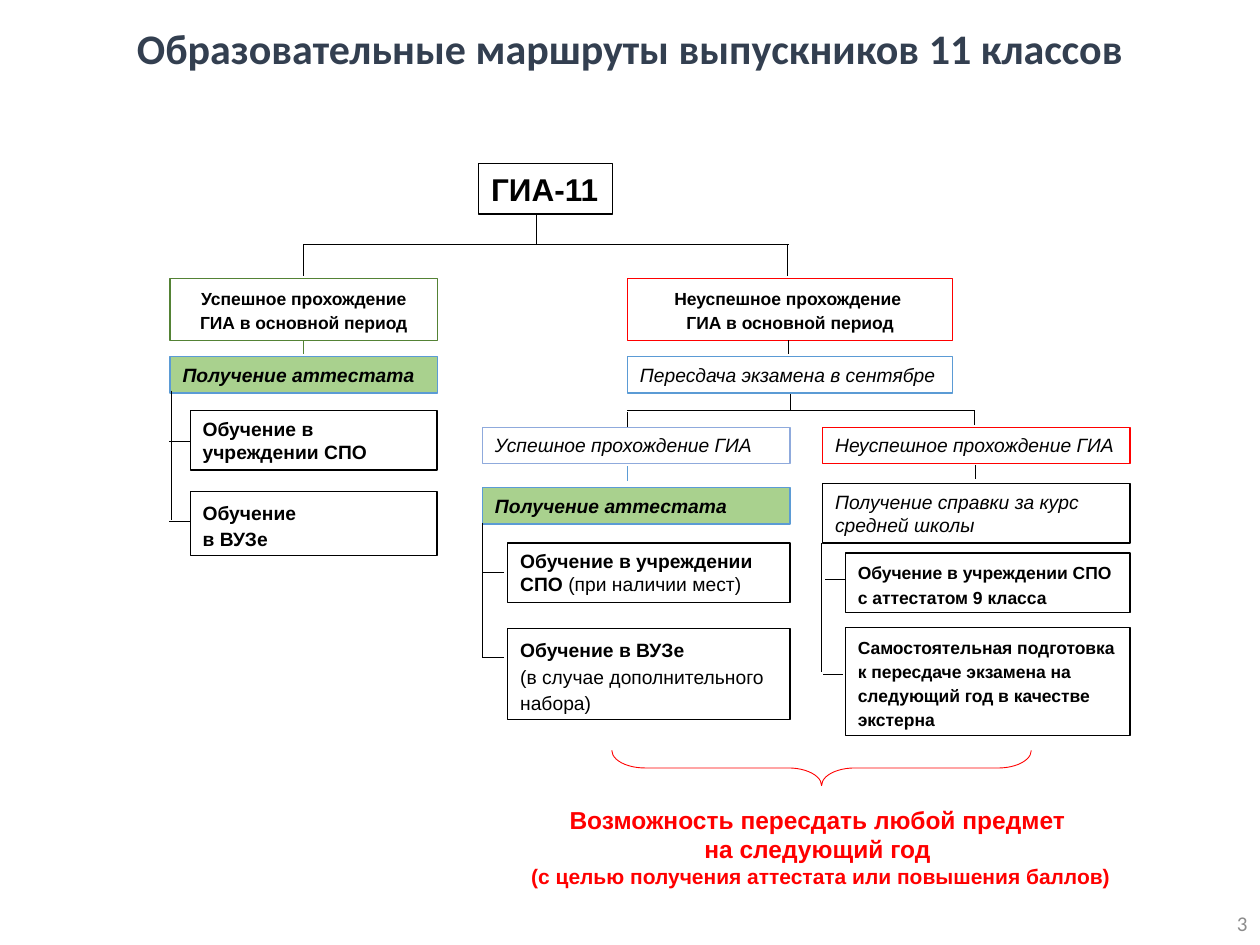
"""Build a slide with the routes open to school leavers after the grade 11 exams."""
from lxml import etree
from pptx import Presentation
from pptx.dml.color import RGBColor
from pptx.enum.shapes import MSO_CONNECTOR, MSO_SHAPE
from pptx.enum.text import MSO_ANCHOR, MSO_AUTO_SIZE, PP_ALIGN
from pptx.oxml.ns import qn
from pptx.util import Inches, Pt

BLACK = RGBColor(0x00, 0x00, 0x00)
RED = RGBColor(0xFF, 0x00, 0x00)
GREEN = RGBColor(0x54, 0x82, 0x35)
LIGHT_GREEN = RGBColor(0xA9, 0xD1, 0x8E)
BLUE = RGBColor(0x5B, 0x9B, 0xD5)
PALE_BLUE = RGBColor(0x8F, 0xAA, 0xDC)
NAVY = RGBColor(0x33, 0x3F, 0x50)
GRAY = RGBColor(0x8C, 0x8C, 0x8C)
LEFT, CENTER, RIGHT = PP_ALIGN.LEFT, PP_ALIGN.CENTER, PP_ALIGN.RIGHT

prs = Presentation()
prs.slide_width, prs.slide_height = Inches(10), Inches(7.5)
slide = prs.slides.add_slide(prs.slide_layouts[5])
shapes = slide.shapes


def write(frame, text, size, color=BLACK, bold=False, italic=False,
          align=LEFT, spacing=1.0, font="Arial", anchor=MSO_ANCHOR.TOP, wrap=True):
    frame.text = text
    frame.word_wrap = wrap
    frame.auto_size = MSO_AUTO_SIZE.NONE
    frame.vertical_anchor = anchor
    for paragraph in frame.paragraphs:
        paragraph.alignment = align
        paragraph.line_spacing = spacing
        paragraph.font.name = font
        paragraph.font.size = Pt(size)
        paragraph.font.bold = bold
        paragraph.font.italic = italic
        paragraph.font.color.rgb = color
    return frame


def box(left, top, width, height, text, size, outline=BLACK, fill=None, **style):
    step = shapes.add_shape(MSO_SHAPE.RECTANGLE, Inches(left), Inches(top),
                            Inches(width), Inches(height))
    step.shadow.inherit = False
    step.line.color.rgb = outline
    step.line.width = Pt(0.75)
    if fill is None:
        step.fill.background()
    else:
        step.fill.solid()
        step.fill.fore_color.rgb = fill
    return write(step.text_frame, text, size, **style)


title = shapes.title
title.left, title.top = Inches(0), Inches(0.1)
title.width, title.height = Inches(10), Inches(0.51)
write(title.text_frame, "Образовательные маршруты выпускников 11 классов", 24, NAVY,
      bold=True, align=CENTER, spacing=1.07, font="Calibri")

page_number = shapes.add_textbox(Inches(7.75), Inches(7.13), Inches(2.25), Inches(0.4))
write(page_number.text_frame, "3", 12, GRAY, align=RIGHT, font="Calibri",
      anchor=MSO_ANCHOR.MIDDLE)

box(3.8, 1.3, 1.06, 0.4, "ГИА-11", 18, bold=True, wrap=False)

outcome = dict(bold=True, align=CENTER, spacing=1.15)
box(1.35, 2.21, 2.12, 0.49, "Успешное прохождение ГИА в основной период", 10, GREEN, **outcome)
box(4.98, 2.21, 2.58, 0.49, "Неуспешное прохождение \vГИА в основной период", 10, RED, **outcome)

for left, top, width in [(1.35, 2.83, 2.12), (3.83, 3.87, 2.44)]:
    box(left, top, width, 0.29, "Получение аттестата", 11, BLUE, LIGHT_GREEN,
        bold=True, italic=True)

box(4.98, 2.83, 2.58, 0.29, "Пересдача экзамена в сентябре", 11, BLUE, italic=True, wrap=False)
box(3.83, 3.39, 2.44, 0.29, "Успешное прохождение ГИА", 11, PALE_BLUE, italic=True)
box(6.53, 3.39, 2.44, 0.29, "Неуспешное прохождение ГИА", 11, RED, italic=True, wrap=False)
box(6.53, 3.84, 2.44, 0.47, "Получение справки за курс средней школы", 11, italic=True)

box(1.51, 3.26, 1.96, 0.47, "Обучение в учреждении СПО", 11, bold=True)
box(1.51, 3.9, 1.96, 0.51, "Обучение \vв ВУЗе", 11, bold=True, spacing=1.15)

college = box(4.03, 4.31, 2.24, 0.47, "Обучение в учреждении СПО ", 11, bold=True)
condition = college.paragraphs[0].add_run()
condition.text = "(при наличии мест)"
condition.font.bold = False

university = box(4.03, 4.99, 2.24, 0.72,
                 "Обучение в ВУЗе\n(в случае дополнительного набора)", 11,
                 bold=True, spacing=1.15)
university.paragraphs[1].font.bold = False

box(6.71, 4.39, 2.26, 0.47, "Обучение в учреждении СПО\nс аттестатом 9 класса", 10,
    bold=True, spacing=1.15)
box(6.71, 4.98, 2.26, 0.86,
    "Самостоятельная подготовка к пересдаче экзамена на следующий год в качестве экстерна",
    10, bold=True, spacing=1.15)

links = [
    (4.26, 1.7, 4.26, 1.94, BLACK),
    (2.41, 1.94, 6.26, 1.94, BLACK),
    (2.41, 1.94, 2.41, 2.19, BLACK),
    (6.25, 1.94, 6.25, 2.19, BLACK),
    (2.41, 2.7, 2.41, 2.81, GREEN),
    (6.26, 2.7, 6.26, 2.81, BLACK),
    (6.27, 3.13, 6.27, 3.25, BLACK),
    (4.98, 3.26, 7.74, 3.26, BLACK),
    (4.98, 3.27, 4.98, 3.39, BLACK),
    (7.73, 3.26, 7.73, 3.37, BLACK),
    (4.98, 3.7, 4.98, 3.82, BLUE),
    (7.74, 3.69, 7.74, 3.8, BLACK),
    (1.36, 3.1, 1.36, 4.13, BLACK),
    (1.51, 3.5, 1.34, 3.5, BLACK),
    (1.51, 4.14, 1.34, 4.14, BLACK),
    (3.83, 4.15, 3.83, 5.22, BLACK),
    (4, 4.54, 3.83, 4.54, BLACK),
    (4, 5.22, 3.83, 5.22, BLACK),
    (6.52, 4.31, 6.52, 5.33, BLACK),
    (6.71, 4.6, 6.55, 4.6, BLACK),
    (6.69, 5.35, 6.53, 5.35, BLACK),
]
for x1, y1, x2, y2, color in links:
    link = shapes.add_connector(MSO_CONNECTOR.STRAIGHT, Inches(x1), Inches(y1),
                                Inches(x2), Inches(y2))
    link.line.color.rgb = color
    link.line.width = Pt(0.5)
    etree.SubElement(link.element.spPr, qn("a:effectLst"))

brace = shapes.add_shape(MSO_SHAPE.RIGHT_BRACE, Inches(6.38), Inches(4.43),
                         Inches(0.28), Inches(3.33))
brace.rotation = 90
brace.adjustments[0] = 0.94
brace.adjustments[1] = 0.5
brace.shadow.inherit = False
brace.fill.background()
brace.line.color.rgb = RED
brace.line.width = Pt(0.5)

retake = shapes.add_textbox(Inches(3.97), Inches(6.34), Inches(5.09), Inches(0.77))
retake_frame = write(retake.text_frame,
                     "Возможность пересдать любой предмет \nна следующий год \v",
                     14, RED, bold=True, align=CENTER)
purpose = retake_frame.paragraphs[1].add_run()
purpose.text = "(с целью получения аттестата или повышения баллов)"
purpose.font.size = Pt(12)

prs.save("out.pptx")
